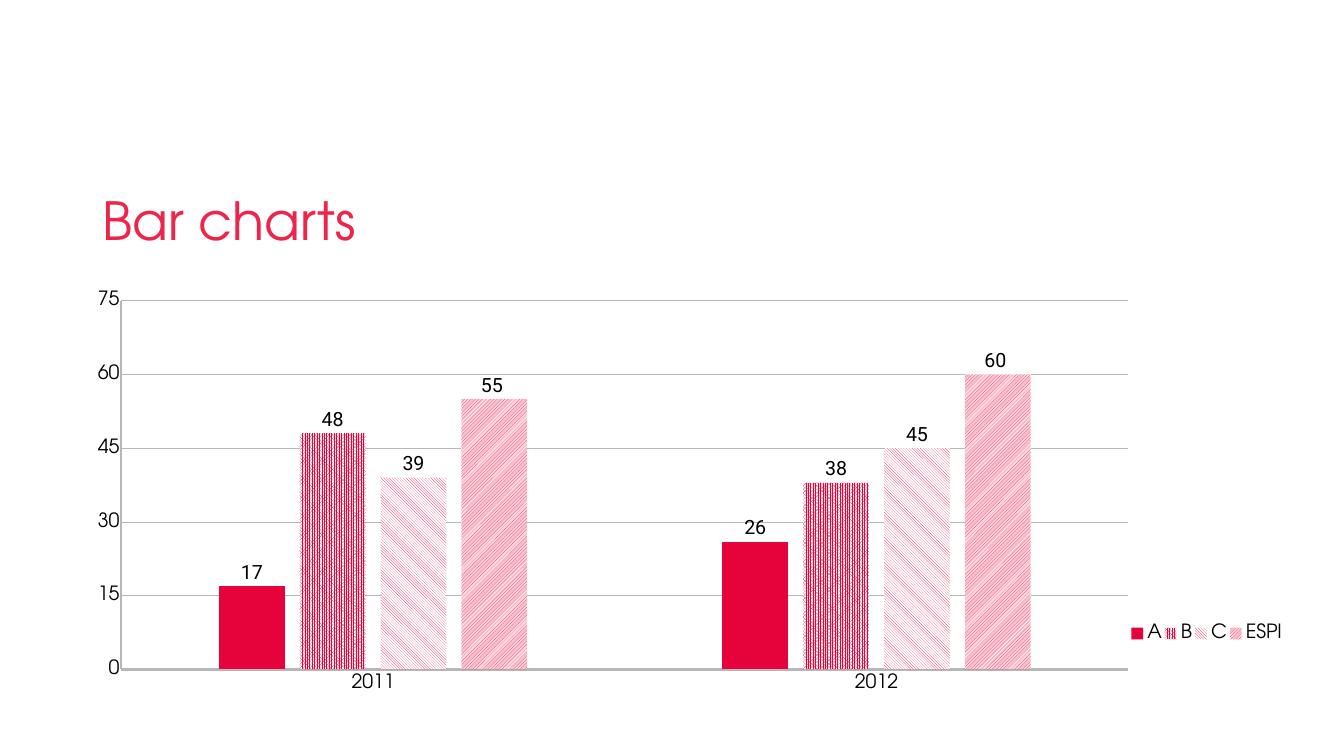
from lxml import etree
from pptx import Presentation
from pptx.chart.data import CategoryChartData
from pptx.dml.color import RGBColor
from pptx.enum import chart as ch, dml, text
from pptx.oxml.ns import qn
from pptx.util import Inches, Pt

# Content
TITLE = "Bar charts"
YEARS = ["2011", "2012"]
SERIES = [  # name, values, pattern, label format
    ("A", (17, 26), None, "0"),
    ("B", (48, 38), dml.MSO_PATTERN.PERCENT_70, "0"),
    ("C", (39, 45), dml.MSO_PATTERN.WIDE_DOWNWARD_DIAGONAL, "0"),
    ("ESPI", (55, 60), dml.MSO_PATTERN.LIGHT_UPWARD_DIAGONAL, r"0_);\(0\)"),
]
COLORS = {"title": "EE254B", "bar": "E6023B", "paper": "FFFFFF",
          "grid": "B7B7B7", "text": "000000"}
HEAD, BODY = "TeX Gyre Adventor", "Roboto"


def rgb(name):
    return RGBColor.from_string(COLORS[name])


def set_font(font, size=28, name=HEAD, color="text"):
    font.size, font.name, font.bold = Pt(size), name, False
    font.color.rgb = rgb(color)


def add_text(tf, content, spacing=1.0, **fmt):
    p = tf.paragraphs[0]
    p.alignment, p.line_spacing = text.PP_ALIGN.LEFT, spacing
    r = p.add_run()
    r.text = content
    set_font(r.font, **fmt)


def set_line(line, width):
    line.color.rgb, line.width = rgb("grid"), Pt(width)


def manual_layout(x, y, w, h, inner=False):
    layout = etree.Element(qn("c:layout"))
    manual = etree.SubElement(layout, qn("c:manualLayout"))
    parts = [("layoutTarget", "inner")] if inner else []
    parts += [("xMode", "edge"), ("yMode", "edge"), ("x", x), ("y", y), ("w", w), ("h", h)]
    for tag, val in parts:
        etree.SubElement(manual, qn("c:" + tag)).set("val", str(val))
    return layout


prs = Presentation()
prs.slide_width, prs.slide_height = Inches(26.67), Inches(15)
s = prs.slides.add_slide(prs.slide_layouts[5])

# Title
sp = s.shapes.title
sp.left, sp.top, sp.width, sp.height = map(Inches, (1.93, 3.93, 19.19, 1.67))
tf = sp.text_frame
tf.word_wrap, tf.auto_size = True, text.MSO_AUTO_SIZE.NONE
tf.vertical_anchor = text.MSO_ANCHOR.TOP
add_text(tf, TITLE, spacing=0.8, size=75, color="title")

# Chart
data = CategoryChartData()
data.categories = YEARS
for name, values, _, _ in SERIES:
    data.add_series(name, values)
chart = s.shapes.add_chart(ch.XL_CHART_TYPE.COLUMN_CLUSTERED,
                           *map(Inches, (1.57, 5.4, 23.93, 8.8)), data).chart
set_font(chart.font, size=10, name=BODY)
chart.has_title = False

# Bars and value labels
plot = chart.plots[0]
plot.gap_width, plot.overlap, plot.vary_by_categories = 297, -23, False
for ser, (_, _, pattern, number_format) in zip(plot.series, SERIES):
    fill = ser.format.fill
    if pattern is None:
        fill.solid()
        fill.fore_color.rgb = rgb("bar")
    else:
        fill.patterned()
        fill.pattern = pattern
        fill.fore_color.rgb, fill.back_color.rgb = rgb("bar"), rgb("paper")
    ser.format.line.fill.background()
    ser.invert_if_negative = False
    labels = ser.data_labels
    labels.show_value = True
    labels.position = ch.XL_LABEL_POSITION.OUTSIDE_END
    labels.number_format, labels.number_format_is_linked = number_format, False
    set_font(labels.font, name=BODY)

# Axes
for axis in (chart.category_axis, chart.value_axis):
    axis.major_tick_mark = axis.minor_tick_mark = ch.XL_TICK_MARK.NONE
    set_font(axis.tick_labels.font)
    set_line(axis.format.line, 3)
chart.category_axis.tick_label_position = ch.XL_TICK_LABEL_POSITION.LOW
axis = chart.value_axis
axis.minimum_scale, axis.maximum_scale, axis.major_unit = 0, 75, 15
axis.tick_labels.number_format, axis.tick_labels.number_format_is_linked = "0", False
axis.has_major_gridlines = True
set_line(axis.major_gridlines.format.line, 1)

# Legend in one row, right of the plot
chart.has_legend = True
legend = chart.legend
legend.position, legend.include_in_layout = ch.XL_LEGEND_POSITION.RIGHT, True
set_font(legend.font)
legend_xml = legend._element
for old in legend_xml.findall(qn("c:layout")):
    legend_xml.remove(old)
legend_xml.find(qn("c:legendPos")).addnext(manual_layout(0.87, 0.78, 0.13, 0.07))

# Plot area position
area = chart._chartSpace.chart.plotArea
for old in area.findall(qn("c:layout")):
    area.remove(old)
area.insert(0, manual_layout(0.035, 0.064, 0.835, 0.832, inner=True))
area_format = etree.SubElement(area, qn("c:spPr"))
paper = etree.SubElement(area_format, qn("a:solidFill"))
etree.SubElement(paper, qn("a:srgbClr")).set("val", COLORS["paper"])

prs.save("out.pptx")
